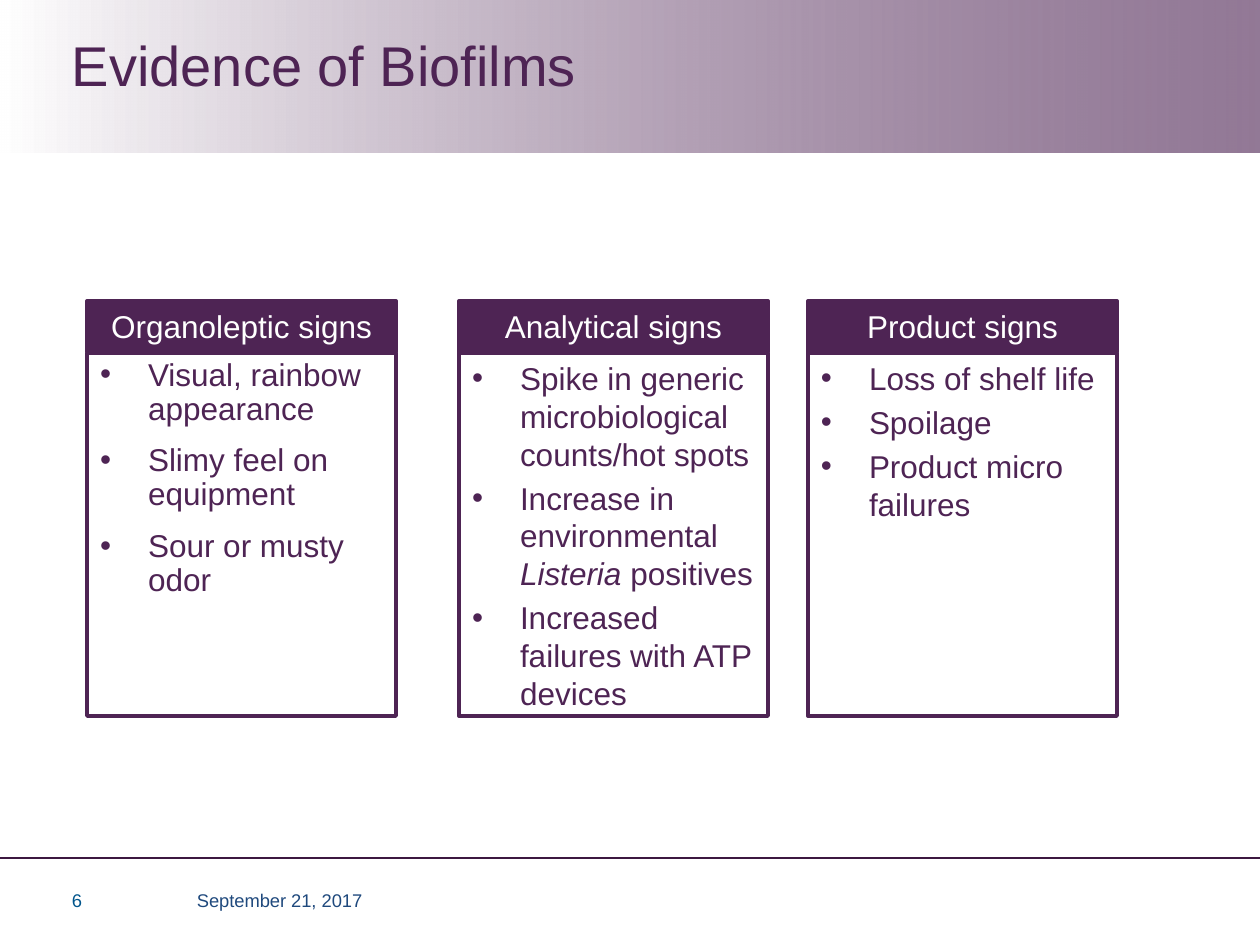
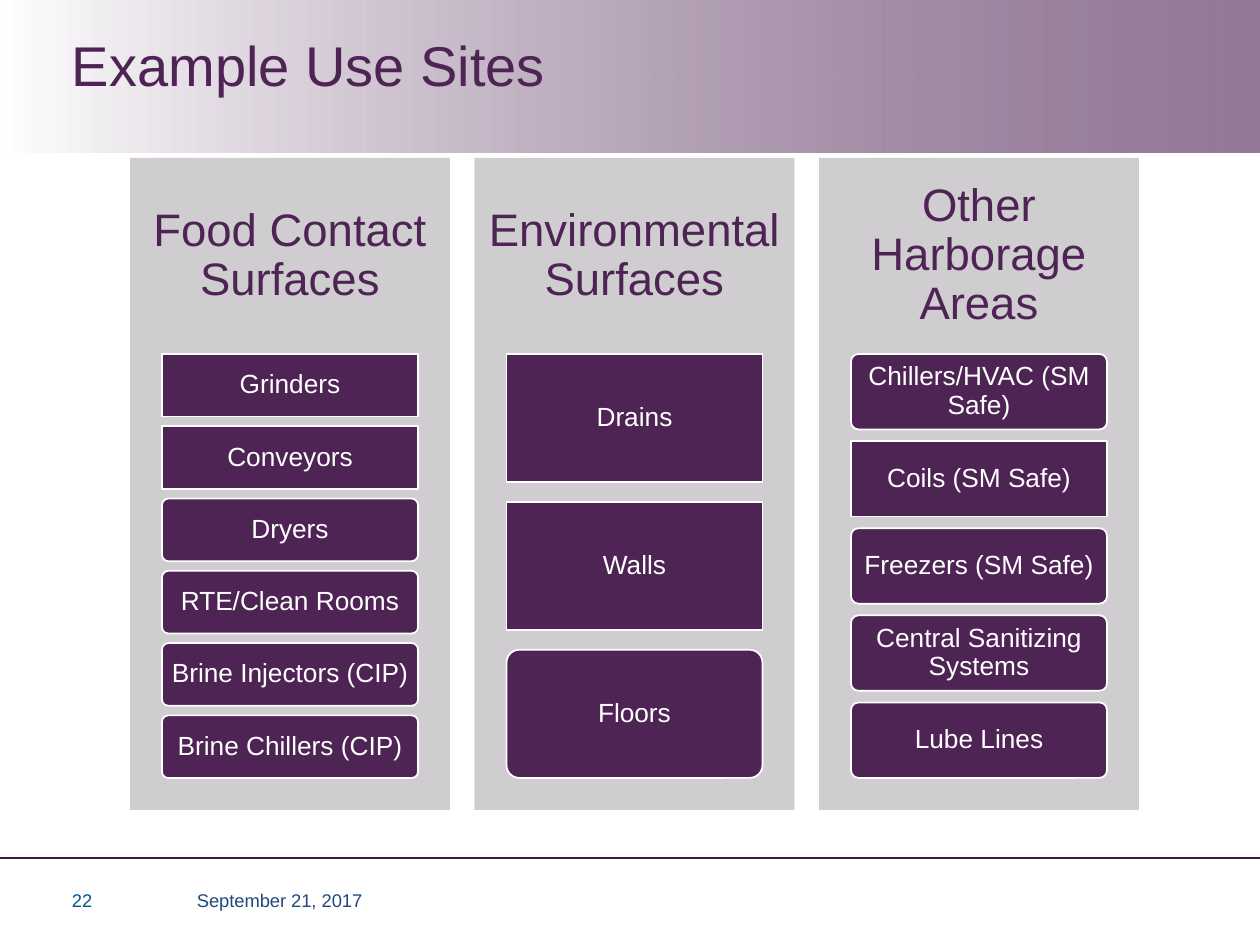
from lxml.etree import SubElement
from pptx import Presentation
from pptx.dml.color import RGBColor
from pptx.enum.shapes import MSO_CONNECTOR, MSO_SHAPE
from pptx.enum.text import MSO_ANCHOR, MSO_AUTO_SIZE, PP_ALIGN
from pptx.oxml.ns import qn
from pptx.util import Pt

FONT = "Arial"
COLORS = {
    "plum": "4E2454",
    "rule": "3C1840",
    "panel": "D0CDD1",
    "white": "FFFFFF",
    "date": "1F497D",
    "number": "01558C",
}
SLIDE_W, SLIDE_H = 1260, 945
DATE = "September 21, 2017"

EVIDENCE = {
    "title": "Evidence of Biofilms",
    "number": "6",
    "columns": [
        {
            "left": 87, "heading": "Organoleptic signs", "line_spacing": 0.9, "gap": 10,
            "signs": [["Visual, rainbow appearance"], ["Slimy feel on equipment"],
                      ["Sour or musty odor"]],
        },
        {
            "left": 459, "heading": "Analytical signs", "line_spacing": 1.0, "gap": 3.6,
            "signs": [["Spike in generic microbiological\ncounts/hot spots"],
                      ["Increase in environmental ", ("Listeria", "italic"), " positives"],
                      ["Increased failures with ATP devices"]],
        },
        {
            "left": 808, "heading": "Product signs", "line_spacing": 1.0, "gap": 3.6,
            "signs": [["Loss of shelf life"], ["Spoilage"], ["Product micro\nfailures"]],
        },
    ],
}

USE_SITES = {
    "title": "Example Use Sites",
    "number": "22",
    "groups": [
        ("Food Contact Surfaces", [
            ("Grinders", "square"), ("Conveyors", "square"), ("Dryers", "round"),
            ("RTE/Clean Rooms", "round"), ("Brine Injectors (CIP)", "round"),
            ("Brine Chillers (CIP)", "round")]),
        ("Environmental Surfaces", [
            ("Drains", "square"), ("Walls", "square"), ("Floors", "round")]),
        ("Other Harborage Areas", [
            ("Chillers/HVAC (SM Safe)", "round"), ("Coils (SM Safe)", "square"),
            ("Freezers (SM Safe)", "round"), ("Central Sanitizing Systems", "round"),
            ("Lube Lines", "round")]),
    ],
}


def px(length):
    return round(length * 914400 / 126)


def box(*lengths):
    return [px(length) for length in lengths]


def rgb(name):
    return RGBColor.from_string(COLORS[name])


def add_bullet(paragraph, indent):
    properties = paragraph._p.get_or_add_pPr()
    properties.set("marL", str(px(indent)))
    properties.set("indent", str(-px(indent)))
    SubElement(properties, qn("a:buFont"), typeface=FONT)
    SubElement(properties, qn("a:buChar"), char="•")


def write(holder, paragraphs, size, color, align=PP_ALIGN.LEFT, anchor=MSO_ANCHOR.TOP,
          line_spacing=1.0, gap=0, bullet_indent=0, insets=(13, 6)):
    frame = holder.text_frame
    frame.word_wrap = True
    frame.auto_size = MSO_AUTO_SIZE.NONE
    frame.vertical_anchor = anchor
    frame.margin_left = frame.margin_right = px(insets[0])
    frame.margin_top = frame.margin_bottom = px(insets[1])
    for position, pieces in enumerate(paragraphs):
        paragraph = frame.add_paragraph() if position else frame.paragraphs[0]
        if bullet_indent:
            add_bullet(paragraph, bullet_indent)
        paragraph.alignment = align
        paragraph.line_spacing = line_spacing
        paragraph.space_before = Pt(gap if position else 0)
        for piece in pieces:
            words, style = (piece, "") if isinstance(piece, str) else piece
            for row, line in enumerate(words.split("\n")):
                if row:
                    paragraph.add_line_break()
                run = paragraph.add_run()
                run.text = line
                run.font.name = FONT
                run.font.size = Pt(size)
                run.font.color.rgb = rgb(color)
                if style == "italic":
                    run.font.italic = True


def add_block(slide, kind, place, fill=None, line=None, line_width=1):
    block = slide.shapes.add_shape(kind, *box(*place))
    block.shadow.inherit = False
    if fill:
        block.fill.solid()
        block.fill.fore_color.rgb = rgb(fill)
    else:
        block.fill.background()
    if line:
        block.line.color.rgb = rgb(line)
        block.line.width = Pt(line_width)
    else:
        block.line.fill.background()
    return block


def add_label(slide, place, words, size, color, **layout):
    label = slide.shapes.add_textbox(*box(*place))
    write(label, [[words]], size, color, anchor=MSO_ANCHOR.MIDDLE, **layout)


def add_band(slide):
    band = add_block(slide, MSO_SHAPE.RECTANGLE, (0, 0, SLIDE_W, 153))
    band.fill.gradient()
    band.fill.gradient_angle = 0
    for stop, color, position in zip(band.fill.gradient_stops, ("white", "plum"), (0, 1)):
        stop.color.rgb = rgb(color)
        stop.position = position
    end_color = band._element.spPr.findall(".//" + qn("a:srgbClr"))[-1]
    SubElement(end_color, qn("a:alpha"), val="61000")
    slide.shapes._spTree.insert(2, band._element)


def start_slide(deck, content):
    slide = deck.slides.add_slide(deck.slide_layouts[5])
    add_band(slide)
    rule = slide.shapes.add_connector(MSO_CONNECTOR.STRAIGHT, *box(0, 858, SLIDE_W, 858))
    rule.line.color.rgb = rgb("rule")
    rule.line.width = Pt(1)
    SubElement(rule._element.spPr, qn("a:effectLst"))
    title = slide.shapes.title
    title.left, title.top, title.width, title.height = box(59, 32, 772, 126)
    write(title, [[content["title"]]], 32, "plum", line_spacing=0.9)
    add_label(slide, (59, 875, 71, 50), content["number"], 10.5, "number")
    add_label(slide, (184, 876, 354, 48), DATE, 10.5, "date")
    return slide


def build_evidence(deck):
    slide = start_slide(deck, EVIDENCE)
    width, top, heading_height, signs_height = 309, 301, 51, 363
    for column in EVIDENCE["columns"]:
        left = column["left"]
        signs = add_block(slide, MSO_SHAPE.RECTANGLE,
                          (left, top + heading_height + 1, width, signs_height),
                          line="plum", line_width=2.25)
        write(signs, column["signs"], 18, "plum", line_spacing=column["line_spacing"],
              gap=column["gap"], bullet_indent=48)
        heading = add_block(slide, MSO_SHAPE.RECTANGLE, (left, top, width, heading_height),
                            "plum", "plum", 2.25)
        write(heading, [[column["heading"]]], 18, "white", PP_ALIGN.CENTER)


def build_use_sites(deck):
    slide = start_slide(deck, USE_SITES)
    left, span, top, width, height = 130, 1009, 158, 320, 652
    heading_height, tile_inset, tiles_top, tiles_height = 196, 32, 354, 424
    gap_ratio = 2 / 13
    groups = USE_SITES["groups"]
    group_pitch = (span - width) / (len(groups) - 1)
    for column, (heading, sites) in enumerate(groups):
        x = left + column * group_pitch
        add_block(slide, MSO_SHAPE.RECTANGLE, (x, top, width, height), "panel")
        add_label(slide, (x, top, width, heading_height), heading, 26, "plum",
                  align=PP_ALIGN.CENTER, line_spacing=0.9, insets=(13, 13))
        tile_height = tiles_height / (len(sites) + (len(sites) - 1) * gap_ratio)
        for row, (site, corners) in enumerate(sites):
            rounded = corners == "round"
            kind = MSO_SHAPE.ROUNDED_RECTANGLE if rounded else MSO_SHAPE.RECTANGLE
            y = tiles_top + row * tile_height * (1 + gap_ratio)
            tile = add_block(slide, kind,
                             (x + tile_inset, y, width - 2 * tile_inset, tile_height),
                             "plum", "white")
            if rounded:
                tile.adjustments[0] = 0.1
            write(tile, [[site]], 15, "white", PP_ALIGN.CENTER, MSO_ANCHOR.MIDDLE,
                  line_spacing=0.9, insets=(5, 4))


def main():
    deck = Presentation()
    deck.slide_width, deck.slide_height = box(SLIDE_W, SLIDE_H)
    build_evidence(deck)
    build_use_sites(deck)
    deck.save("out.pptx")


if __name__ == "__main__":
    main()
